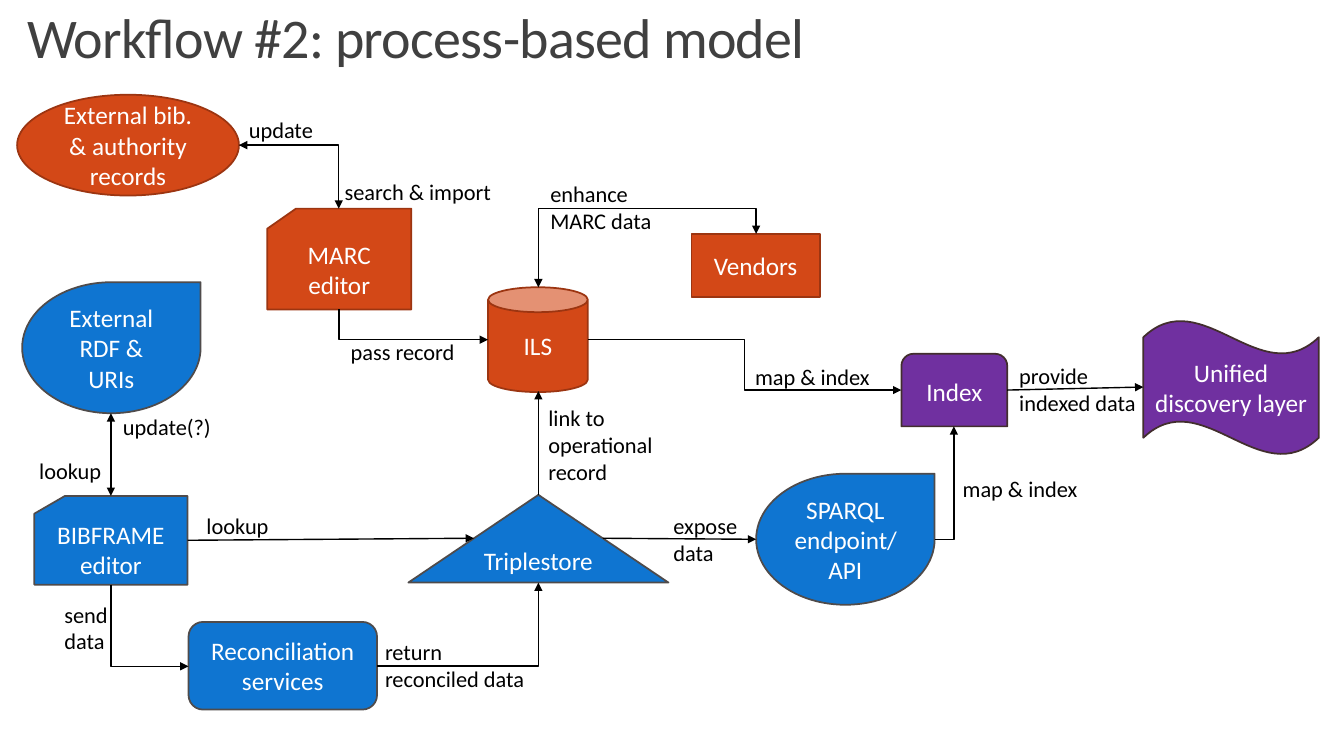
from dataclasses import dataclass

import pptx
import pptx.dml.color
import pptx.enum.shapes
import pptx.enum.text
import pptx.oxml.ns
import pptx.oxml.xmlchemy
import pptx.util
from pptx.util import Inches

KIND = pptx.enum.shapes.MSO_SHAPE
LINK = pptx.enum.shapes.MSO_CONNECTOR
ANCHOR = pptx.enum.text.MSO_ANCHOR
qn = pptx.oxml.ns.qn


@dataclass(frozen=True)
class Theme:
    font: str = "Calibri"
    title_size: float = 40
    node_size: float = 18
    label_size: float = 16
    outline: float = 1.25
    link_width: float = 1
    title: str = "404040"
    label: str = "000000"
    node_text: str = "FFFFFF"
    # (fill, outline) of each family of nodes
    marc: tuple = ("D34817", "9C3511")
    linked_data: tuple = ("0F75D1", "4F4B4B")
    discovery: tuple = ("7030A0", "422E2E")


THEME = Theme()

# name: text, kind, colours, left, top, width, height
NODES = {
    "ils": ("ILS", KIND.CAN, THEME.marc, 4.84, 2.85, 0.99, 1.04),
    "index": ("Index", KIND.ROUND_2_SAME_RECTANGLE, THEME.discovery, 8.94, 3.51, 1.05, 0.72),
    "discovery": ("Unified discovery layer", KIND.WAVE, THEME.discovery, 11.34, 3.18, 1.74, 1.33),
    "triplestore": ("Triplestore", KIND.ISOSCELES_TRIANGLE, THEME.linked_data, 4.05, 4.91, 2.58, 0.87),
    "sparql": ("SPARQL endpoint/API", KIND.TEAR, THEME.linked_data, 7.5, 4.7, 1.77, 1.3),
    "reconciliation": ("Reconciliation services", KIND.ROUNDED_RECTANGLE, THEME.linked_data, 1.87, 6.17, 1.87, 0.87),
    "bibframe": ("BIBFRAME editor", KIND.FLOWCHART_CARD, THEME.linked_data, 0.34, 4.92, 1.52, 0.88),
    "rdf": ("External RDF & URIs", KIND.TEAR, THEME.linked_data, 0.22, 2.8, 1.77, 1.3),
    "records": ("External bib. & authority records", KIND.OVAL, THEME.marc, 0.17, 0.94, 2.2, 1),
    "marc": ("MARC editor", KIND.FLOWCHART_CARD, THEME.marc, 2.65, 2.07, 1.43, 1),
    "vendors": ("Vendors", KIND.RECTANGLE, THEME.marc, 6.86, 2.32, 1.27, 0.63),
}

# text, left, top, width, height
LABELS = [
    ("link to operational record", 5.34, 3.96, 1.32, 0.91),
    ("provide\nindexed data", 10.01, 3.54, 1.45, 0.64),
    ("map & index", 7.39, 3.55, 1.59, 0.37),
    ("send data", 0.54, 5.91, 1.07, 0.64),
    ("return reconciled data", 3.72, 6.28, 1.59, 0.64),
    ("expose\ndata", 6.58, 5.03, 1.59, 0.64),
    ("map & index", 9.45, 4.66, 1.59, 0.37),
    ("lookup", 1.95, 5.03, 1.07, 0.37),
    ("lookup", 0.29, 4.49, 1.07, 0.37),
    ("enhance\nMARC data", 5.36, 1.74, 1.3, 0.64),
    ("search & import", 3.32, 1.72, 1.96, 0.37),
    ("update", 2.37, 1.1, 1.07, 0.37),
    ("update(?)", 1.12, 4.05, 1.19, 0.37),
    ("pass record", 3.38, 3.31, 1.96, 0.37),
]

# (node, connection site), (node, connection site), start, end, arrow at both ends
STRAIGHT_LINKS = [
    (("triplestore", 5), ("sparql", 4), (5.98, 5.34), (7.5, 5.35), False),
    (("triplestore", 0), ("ils", 3), (5.34, 4.91), (5.34, 3.88), False),
    (("index", 0), ("discovery", 1), (9.99, 3.87), (11.34, 3.84), False),
    (("bibframe", 3), ("triplestore", 1), (1.86, 5.36), (4.7, 5.34), False),
    (("bibframe", 0), ("rdf", 2), (1.1, 4.92), (1.1, 4.1), True),
]

# as above, then: first leg vertical, place of the middle leg (None for one bend)
BENT_LINKS = [
    (("ils", 4), ("index", 2), (5.83, 3.37), (8.94, 3.87), False, False, 0.5),
    (("sparql", 0), ("index", 1), (9.27, 5.35), (9.46, 4.23), False, False, None),
    (("bibframe", 2), ("reconciliation", 1), (1.1, 5.8), (1.87, 6.61), False, True, None),
    (("reconciliation", 3), ("triplestore", 3), (3.74, 6.61), (5.34, 5.78), False, False, None),
    (("marc", 2), ("ils", 2), (3.36, 3.07), (4.84, 3.37), False, True, None),
    (("ils", 1), ("vendors", 0), (5.34, 2.85), (7.5, 2.32), True, True, 1.47),
    (("records", 6), ("marc", 0), (2.37, 1.44), (3.36, 2.07), True, False, None),
]


def rgb(value):
    return pptx.dml.color.RGBColor.from_string(value)


def write(frame, text, size, color, align=None):
    frame.word_wrap = True
    frame.text = text
    for para in frame.paragraphs:
        para.alignment = align
        para.font.name = THEME.font
        para.font.size = pptx.util.Pt(size)
        para.font.color.rgb = rgb(color)


def add_title(page, text):
    frame = page.shapes.add_textbox(Inches(0.17), 0, Inches(11), Inches(0.74)).text_frame
    write(frame, text, THEME.title_size, THEME.title)
    frame.vertical_anchor = ANCHOR.BOTTOM
    para = frame.paragraphs[0]
    para.line_spacing = 0.85
    para.runs[0].font._element.set("spc", "-50")


def add_label(page, text, *place):
    frame = page.shapes.add_textbox(*map(Inches, place)).text_frame
    write(frame, text, THEME.label_size, THEME.label)
    frame.auto_size = pptx.enum.text.MSO_AUTO_SIZE.SHAPE_TO_FIT_TEXT


def add_node(page, text, kind, colors, *place):
    node = page.shapes.add_shape(kind, *map(Inches, place))
    fill, outline = colors
    node.shadow.inherit = False
    node.fill.solid()
    node.fill.fore_color.rgb = rgb(fill)
    node.line.color.rgb = rgb(outline)
    node.line.width = pptx.util.Pt(THEME.outline)
    write(node.text_frame, text, THEME.node_size, THEME.node_text, pptx.enum.text.PP_ALIGN.CENTER)
    node.text_frame.vertical_anchor = ANCHOR.MIDDLE
    return node


def add_child(parent, tag, **attributes):
    child = parent.makeelement(qn(tag), attributes)
    parent.append(child)
    return child


def attach(link, connect, tag, node, site):
    """Join one end to a site; sites past the fourth are written as XML."""
    if site < 4:
        connect(node, site)
    else:
        holder = link._element.find(".//" + qn("p:cNvCxnSpPr"))
        joint = holder.makeelement(qn(tag), {"id": str(node.shape_id), "idx": str(site)})
        holder.insert(0 if tag == "a:stCxn" else len(holder), joint)


def add_link(page, nodes, kind, source, target, start, end, two_way):
    points = [Inches(value) for value in (*start, *end)]
    link = page.shapes.add_connector(kind, *points)
    attach(link, link.begin_connect, "a:stCxn", nodes[source[0]], source[1])
    attach(link, link.end_connect, "a:endCxn", nodes[target[0]], target[1])
    link.begin_x, link.begin_y, link.end_x, link.end_y = points
    link.line.color.rgb = rgb(THEME.label)
    link.line.width = pptx.util.Pt(THEME.link_width)
    stroke = link.line._get_or_add_ln()
    if two_way:
        add_child(stroke, "a:headEnd", type="triangle")
    add_child(stroke, "a:tailEnd", type="triangle")
    add_child(link._element.spPr, "a:effectLst")
    return link


def bend(link, start, end, vertical_first, middle):
    """Shape a rightward elbow; a vertical first leg is a turned horizontal one."""
    (x1, y1), (x2, y2) = start, end
    width, height = x2 - x1, abs(y2 - y1)
    frame = link._element.spPr.find(qn("a:xfrm"))
    for name in ("flipH", "flipV"):
        frame.attrib.pop(name, None)
    if vertical_first:
        width, height = height, width
        frame.set("rot", str(270 * 60000))
        if y2 > y1:
            frame.set("flipH", "1")
    elif y2 < y1:
        frame.set("flipV", "1")
    link.left, link.top = Inches((x1 + x2 - width) / 2), Inches((y1 + y2 - height) / 2)
    link.width, link.height = Inches(width), Inches(height)
    geometry = link._element.spPr.find(qn("a:prstGeom"))
    if middle is None:
        geometry.set("prst", "bentConnector2")
    else:
        guides = geometry.find(qn("a:avLst"))
        add_child(guides, "a:gd", name="adj1", fmla=f"val {round(middle * 100000)}")


def main():
    deck = pptx.Presentation()
    deck.slide_width, deck.slide_height = Inches(13.33), Inches(7.5)
    page = deck.slides.add_slide(deck.slide_layouts[6])
    add_title(page, "Workflow #2: process-based model")
    nodes = {name: add_node(page, *node) for name, node in NODES.items()}
    for link in STRAIGHT_LINKS:
        add_link(page, nodes, LINK.STRAIGHT, *link)
    for source, target, start, end, two_way, vertical_first, middle in BENT_LINKS:
        link = add_link(page, nodes, LINK.ELBOW, source, target, start, end, two_way)
        bend(link, start, end, vertical_first, middle)
    for label in LABELS:
        add_label(page, *label)
    deck.save("out.pptx")


if __name__ == "__main__":
    main()
